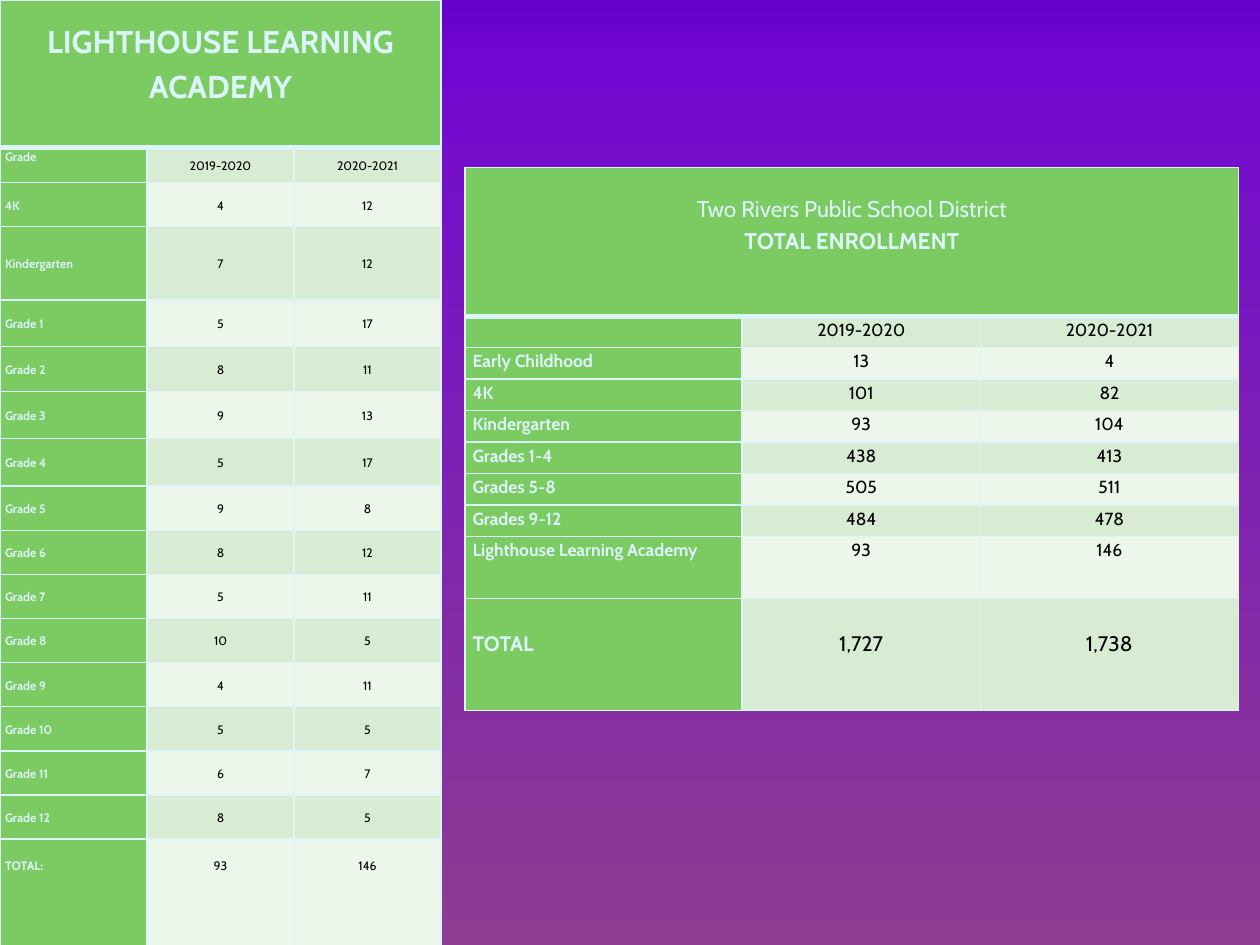
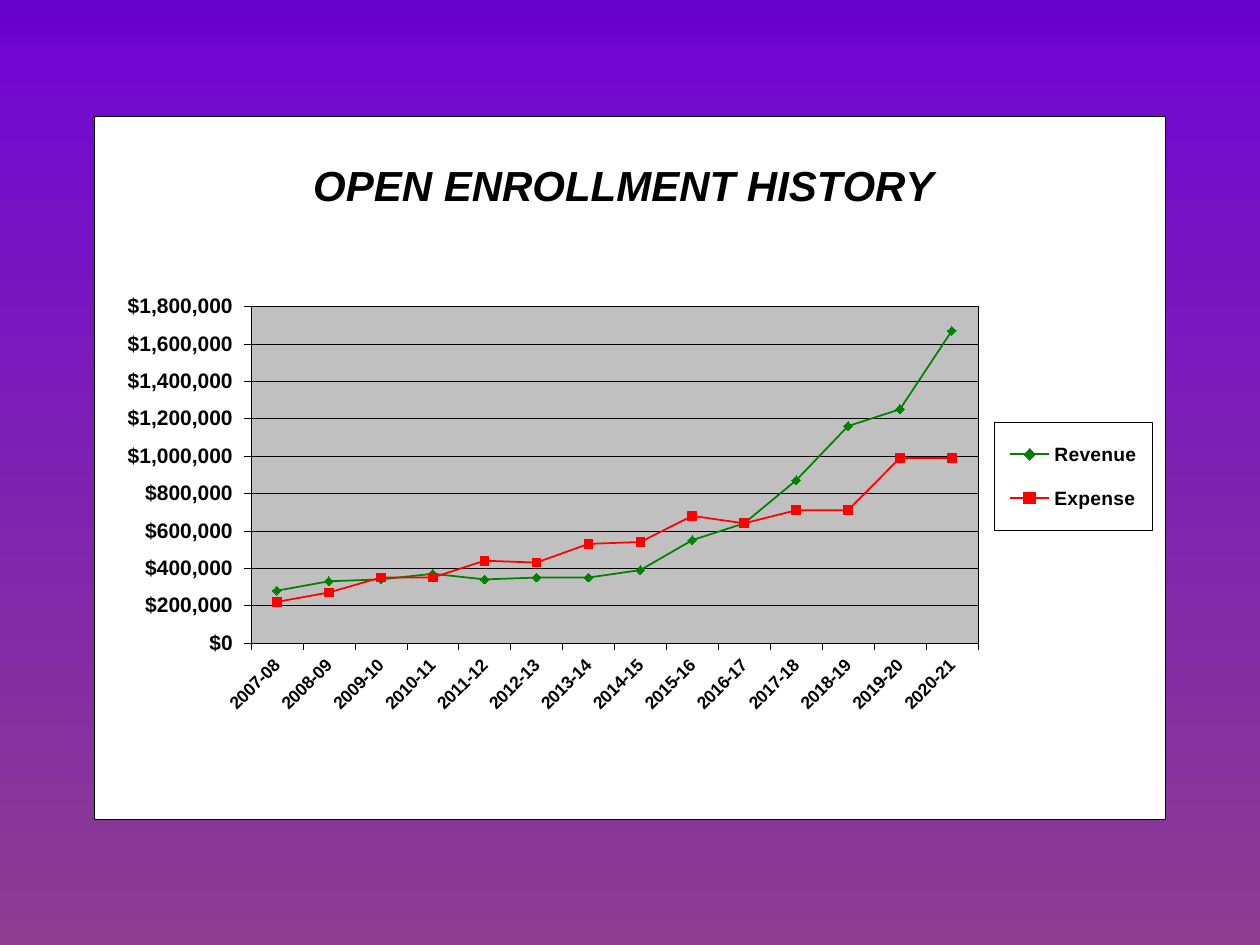
from lxml import etree
from pptx import Presentation
from pptx.chart.data import CategoryChartData
from pptx.dml.color import RGBColor
from pptx.enum.chart import XL_CHART_TYPE, XL_LEGEND_POSITION, XL_MARKER_STYLE, XL_TICK_MARK
from pptx.enum.text import MSO_ANCHOR, PP_ALIGN
from pptx.oxml import parse_xml
from pptx.oxml.ns import nsdecls, qn
from pptx.util import Inches, Pt

COLORS = {"green": "7CCA62", "pale": "DBF5F9", "band": "D7ECD3", "light": "ECF6EA",
          "black": "000000", "white": "FFFFFF", "plot": "C0C0C0",
          "revenue": "008000", "expense": "FF0000"}
BACKGROUND_STOPS = [(0, "6600CC"), (6, "7005D4"), (12, "730CCC"), (100, "8C3D91")]
TABLE_FONT, CHART_FONT = "Cabin", "Arial"
YEARS = ("2019-2020", "2020-2021")

ACADEMY_ROWS = [
    ("Grade", *YEARS), ("4K", "4", "12"), ("Kindergarten", "7", "12"),
    ("Grade 1", "5", "17"), ("Grade 2", "8", "11"), ("Grade 3", "9", "13"),
    ("Grade 4", "5", "17"), ("Grade 5", "9", "8"), ("Grade 6", "8", "12"),
    ("Grade 7", "5", "11"), ("Grade 8", "10", "5"), ("Grade 9", "4", "11"),
    ("Grade 10", "5", "5"), ("Grade 11", "6", "7"), ("Grade 12", "8", "5"),
    ("TOTAL:", "93", "146")]
ACADEMY_HEIGHTS = [1.17, 0.28, 0.35, 0.58, 0.37, 0.36, 0.37, 0.38] + [0.35] * 8 + [0.87]
DISTRICT_ROWS = [
    ("", *YEARS), ("Early Childhood", "13", "4"), ("4K", "101", "82"),
    ("Kindergarten", "93", "104"), ("Grades 1-4", "438", "413"),
    ("Grades 5-8", "505", "511"), ("Grades 9-12", "484", "478"),
    ("Lighthouse Learning Academy", "93", "146"), ("TOTAL", "1,727", "1,738")]
DISTRICT_HEIGHTS = [1.18] + [0.25] * 7 + [0.49, 0.89]

SCHOOL_YEARS = [f"20{year:02}-{year + 1:02}" for year in range(7, 21)]
HISTORY = {
    "Revenue": (280000, 330000, 340000, 370000, 340000, 350000, 350000, 390000,
                550000, 640000, 870000, 1160000, 1250000, 1670000),
    "Expense": (220000, 270000, 350000, 350000, 440000, 430000, 530000, 540000,
                680000, 640000, 710000, 710000, 990000, 990000)}
MARKERS = {"Revenue": XL_MARKER_STYLE.DIAMOND, "Expense": XL_MARKER_STYLE.SQUARE}


def rgb(name):
    """Return the named colour."""
    return RGBColor.from_string(COLORS[name])


def set_background(master):
    """Give every slide the purple gradient."""
    master.background.fill.gradient()
    gradient = master.element.find(".//" + qn("p:bg")).find(".//" + qn("a:gradFill"))
    stops = "".join(f'<a:gs pos="{percent * 1000}"><a:srgbClr val="{color}"/></a:gs>'
                    for percent, color in BACKGROUND_STOPS)
    gradient.getparent().replace(gradient, parse_xml(
        f'<a:gradFill {nsdecls("a")} rotWithShape="1"><a:gsLst>{stops}</a:gsLst>'
        '<a:lin ang="5400000" scaled="0"/></a:gradFill>'))


def border_cell(cell, top=1, bottom=1):
    """Draw the four pale edges of a cell."""
    edges = {"L": 1, "R": 1, "T": top, "B": bottom}
    for index, (side, points) in enumerate(edges.items()):
        cell._tc.get_or_add_tcPr().insert(index, parse_xml(
            f'<a:ln{side} {nsdecls("a")} w="{Pt(points)}"><a:solidFill>'
            f'<a:srgbClr val="{COLORS["pale"]}"/></a:solidFill></a:ln{side}>'))


def style_cell(cell, fill, side, top=0):
    """Fill a cell and set its margins."""
    cell.fill.solid()
    cell.fill.fore_color.rgb = rgb(fill)
    cell.margin_left = cell.margin_right = Inches(side)
    cell.margin_top, cell.margin_bottom = Inches(top), 0


def write_line(paragraph, text, size, color, bold, align):
    """Write one line of table text."""
    paragraph.alignment, paragraph.line_spacing = align, 1.15
    if not text:
        etree.SubElement(paragraph._p, qn("a:endParaRPr"), sz=str(size * 100))
        return
    run = paragraph.add_run()
    run.text = text
    run.font.name, run.font.size, run.font.bold = TABLE_FONT, Pt(size), bold
    run.font.color.rgb = rgb(color)


def add_enrollment_table(slide, box, widths, heights, title_lines, rows, size,
                         total_size, side, title_top, total_top, centered_rows=()):
    """Build an enrollment table with a merged title row."""
    table = slide.shapes.add_table(len(heights), 3, *map(Inches, box)).table
    for column, width in zip(table.columns, widths):
        column.width = Inches(width)
    for row, height in zip(table.rows, heights):
        row.height = Inches(height)

    title = table.cell(0, 0)
    title.merge(table.cell(0, 2))
    for column in range(3):
        style_cell(table.cell(0, column), "green", side, title_top)
        border_cell(table.cell(0, column), bottom=3)
    for index, (text, title_size, bold) in enumerate(title_lines):
        paragraph = title.text_frame.add_paragraph() if index else title.text_frame.paragraphs[0]
        write_line(paragraph, text, title_size, "pale", bold, PP_ALIGN.CENTER)

    for row, values in enumerate(rows, 1):
        is_total = row == len(rows)
        for column, text in enumerate(values):
            cell = table.cell(row, column)
            is_label = column == 0
            fill = "green" if is_label else "band" if row % 2 else "light"
            style_cell(cell, fill, side, total_top if is_total else 0)
            border_cell(cell, top=3 if row == 1 else 1)
            if row in centered_rows and (row > 1 or not is_label):
                cell.vertical_anchor = MSO_ANCHOR.MIDDLE
            write_line(cell.text_frame.paragraphs[0], text, total_size if is_total else size,
                       "pale" if is_label else "black", is_label,
                       PP_ALIGN.LEFT if is_label else PP_ALIGN.CENTER)


def build_enrollment(slide):
    """Place the academy and district tables."""
    add_enrollment_table(
        slide, (0, 0, 3.5, 7.5), [3.5 / 3] * 3, ACADEMY_HEIGHTS,
        [("LIGHTHOUSE LEARNING ACADEMY", 18, True)], ACADEMY_ROWS,
        size=7, total_size=7, side=0.04, title_top=0.14, total_top=0.14,
        centered_rows=range(1, len(ACADEMY_ROWS)))
    add_enrollment_table(
        slide, (3.69, 1.33, 6.14, 4.33), [2.2, 1.89, 2.05], DISTRICT_HEIGHTS,
        [("Two Rivers Public School District", 13, False), ("TOTAL ENROLLMENT", 13, True)],
        DISTRICT_ROWS, size=10, total_size=12, side=0.06, title_top=0.19, total_top=0.23)


def style_font(font, size):
    """Apply the bold black chart lettering."""
    font.name, font.size, font.bold = CHART_FONT, Pt(size), True
    font.color.rgb = rgb("black")


def style_line(line, color="black", width=0.25):
    """Colour a line and set its width."""
    line.color.rgb = rgb(color)
    line.width = Pt(width)


def chart_layout(inner=False, **fractions):
    """Return a manual layout in fractions of the chart."""
    target = '<c:layoutTarget val="inner"/>' if inner else ""
    modes = "".join(f'<c:{axis}Mode val="edge"/>' for axis in "xy")
    places = "".join(f'<c:{key} val="{value}"/>' for key, value in fractions.items())
    return parse_xml(f'<c:layout {nsdecls("c")}><c:manualLayout>{target}{modes}{places}'
                     '</c:manualLayout></c:layout>')


def place(element, layout, after=None):
    """Set the layout of a chart part."""
    for old in element.findall(qn("c:layout")):
        element.remove(old)
    if after is None:
        element.insert(0, layout)
    else:
        element.find(qn(after)).addnext(layout)


def frame_properties(fill):
    """Return a filled area with a thin black border."""
    return parse_xml(
        f'<c:spPr {nsdecls("c", "a")}><a:solidFill><a:srgbClr val="{COLORS[fill]}"/></a:solidFill>'
        f'<a:ln w="{Pt(0.25)}"><a:solidFill><a:srgbClr val="{COLORS["black"]}"/></a:solidFill>'
        '</a:ln></c:spPr>')


def style_axes(chart):
    """Set the scale, labels and lines of both axes."""
    for axis, size in ((chart.category_axis, 10), (chart.value_axis, 12)):
        style_font(axis.tick_labels.font, size)
        style_line(axis.format.line)
        axis.major_tick_mark = XL_TICK_MARK.OUTSIDE
        axis.minor_tick_mark = XL_TICK_MARK.NONE
    label_body = chart.category_axis._element.find(qn("c:txPr")).find(qn("a:bodyPr"))
    label_body.set("rot", "-2700000")
    label_body.set("vert", "horz")
    money = chart.value_axis
    money.minimum_scale, money.maximum_scale, money.major_unit = 0, 1800000, 200000
    money.tick_labels.number_format = '"$"#,##0_);\\("$"#,##0\\)'
    money.tick_labels.number_format_is_linked = False
    style_line(money.major_gridlines.format.line)


def build_history(slide, box=(0.75, 0.92, 8.5, 5.58)):
    """Place the open enrollment line chart."""
    data = CategoryChartData()
    data.categories = SCHOOL_YEARS
    for name, amounts in HISTORY.items():
        data.add_series(name, amounts)
    chart = slide.shapes.add_chart(XL_CHART_TYPE.LINE_MARKERS, *map(Inches, box), data).chart
    style_font(chart.font, 12)
    chart.plots[0].vary_by_categories = False

    chart.has_title = True
    heading = chart.chart_title.text_frame.paragraphs[0].add_run()
    heading.text = "OPEN ENROLLMENT HISTORY"
    style_font(heading.font, 24)
    heading.font.italic = True
    chart.chart_title.include_in_layout = False
    place(chart.chart_title._element, chart_layout(x=0.197, y=0.05), after="c:tx")

    style_axes(chart)
    for series in chart.plots[0].series:
        color = series.name.lower()
        series.smooth = False
        style_line(series.format.line, color, 1)
        series.marker.style, series.marker.size = MARKERS[series.name], 5
        series.marker.format.fill.solid()
        series.marker.format.fill.fore_color.rgb = rgb(color)
        style_line(series.marker.format.line, color)

    chart.has_legend = True
    legend = chart.legend
    legend.position, legend.include_in_layout = XL_LEGEND_POSITION.RIGHT, False
    style_font(legend.font, 11)
    place(legend._element, chart_layout(x=0.84, y=0.435, w=0.148, h=0.155), after="c:legendPos")
    legend._element.find(qn("c:txPr")).addprevious(frame_properties("white"))

    space = chart._chartSpace
    space.find(qn("c:chart")).addnext(frame_properties("white"))
    plot_area = space.find(".//" + qn("c:plotArea"))
    place(plot_area, chart_layout(inner=True, x=0.146, y=0.271, w=0.679, h=0.479))
    plot_area.append(frame_properties("plot"))


def main():
    """Build the presentation."""
    deck = Presentation()
    deck.slide_width, deck.slide_height = Inches(10), Inches(7.5)
    set_background(deck.slide_master)
    for build in (build_enrollment, build_history):
        build(deck.slides.add_slide(deck.slide_layouts[6]))
    deck.save("out.pptx")


if __name__ == "__main__":
    main()
